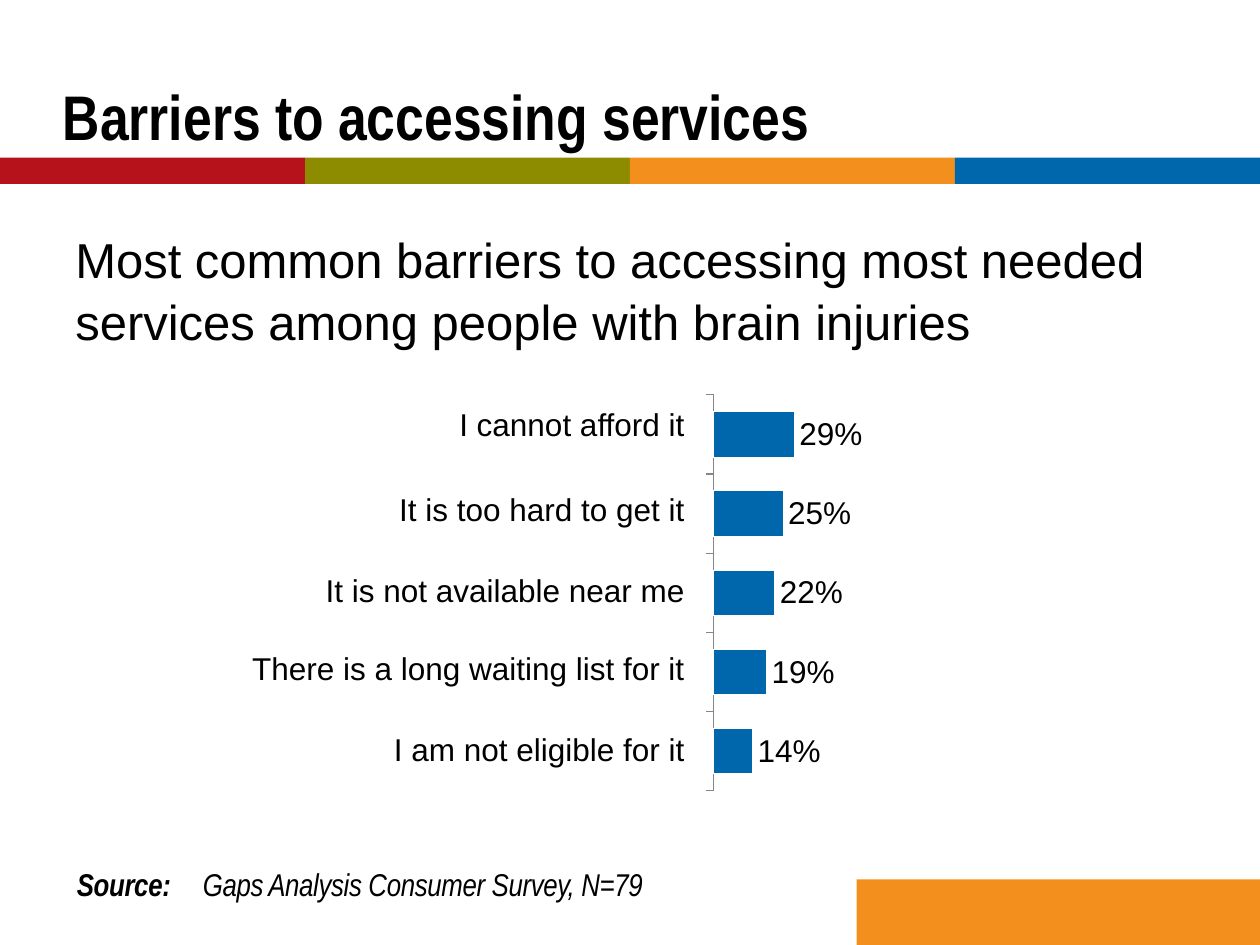
from lxml.etree import SubElement
from pptx import Presentation
from pptx.chart.data import CategoryChartData
from pptx.dml.color import RGBColor
from pptx.enum.chart import XL_CHART_TYPE as ChartType, XL_LABEL_POSITION as LabelPos
from pptx.enum.chart import XL_TICK_LABEL_POSITION as TickLabels, XL_TICK_MARK as Tick
from pptx.enum.shapes import MSO_SHAPE as Shape
from pptx.enum.text import MSO_ANCHOR as Anchor, PP_ALIGN as Align
from pptx.oxml.ns import qn
from pptx.util import Cm, Pt


def color(value):
    return RGBColor.from_string(value)


def add_text(text, left, top, width, height, size, font="Arial"):
    box = slide.shapes.add_textbox(Cm(left), Cm(top), Cm(width), Cm(height))
    box.text_frame.word_wrap = True
    paragraph = box.text_frame.paragraphs[0]
    paragraph.text = text
    paragraph.font.size = Pt(size)
    paragraph.font.name = font
    paragraph.font.color.rgb = color("000000")
    return box.text_frame, paragraph


prs = Presentation()
prs.slide_width, prs.slide_height = Cm(25.4), Cm(19.05)
slide = prs.slides.add_slide(prs.slide_layouts[6])

bands = [
    (0, 3.18, 6.15, 0.53, "B5121B"),
    (6.15, 3.18, 6.55, 0.53, "8D8B00"),
    (12.7, 3.18, 6.55, 0.53, "F3901D"),
    (19.25, 3.18, 6.15, 0.53, "0067AC"),
    (17.27, 17.73, 8.13, 1.32, "F3901D"),
]
for left, top, width, height, fill in bands:
    band = slide.shapes.add_shape(Shape.RECTANGLE, Cm(left), Cm(top), Cm(width), Cm(height))
    band.shadow.inherit = False
    band.fill.solid()
    band.fill.fore_color.rgb = color(fill)
    band.line.fill.background()

title_frame, title = add_text(
    "Barriers to accessing services", 1.27, 0.74, 22.86, 2.34, 36, "Arial Narrow")
title.font.bold = True
title_frame.vertical_anchor = Anchor.BOTTOM
title_frame.margin_left = title_frame.margin_right = 0
title_frame.margin_top = title_frame.margin_bottom = 0

_, intro = add_text(
    "Most common barriers to accessing most needed services among people with brain injuries",
    1.27, 4.45, 22.86, 2.8, 28)
intro.space_before = Pt(12)
intro.line_spacing = 1.05

source_frame, source = add_text("Source:", 1.3, 17.58, 12.04, 0.76, 18, "Arial Narrow")
source_frame.word_wrap = False
source.font.italic = True
source.space_before = Pt(6)
source.line_spacing = Pt(14)
source.runs[0].font.bold = True
source.add_run().text = "\tGaps Analysis Consumer Survey, N=79"
for run in source.runs:
    run.font._element.set("spc", "-20")

barrier_data = CategoryChartData(number_format="###0%")
barrier_data.categories = ["1", "2", "3", "4", "5"]
barrier_data.add_series("Series 1", [0.29, 0.25, 0.22, 0.19, 0.14])
chart = slide.shapes.add_chart(
    ChartType.BAR_CLUSTERED, Cm(8.79), Cm(7.32), Cm(11.43), Cm(9.7), barrier_data).chart
chart.has_legend = False
chart.has_title = False
chart.font.size = Pt(10)
chart.font.name = "Arial"
chart.font.color.rgb = color("000000")

barrier_axis = chart.category_axis
barrier_axis.reverse_order = True
barrier_axis.has_major_gridlines = False
barrier_axis.major_tick_mark = Tick.OUTSIDE
barrier_axis.tick_label_position = TickLabels.NONE
barrier_axis.format.line.color.rgb = color("868686")
barrier_axis.format.line.width = Pt(0.75)

share_axis = chart.value_axis
share_axis.minimum_scale, share_axis.maximum_scale = 0, 1
share_axis.has_major_gridlines = False
share_axis.visible = False

plot = chart.plots[0]
plot.gap_width = 75
plot.vary_by_categories = False
bars = plot.series[0]
bars.format.fill.solid()
bars.format.fill.fore_color.rgb = color("0067AC")
bars.format.line.color.rgb = color("FFFFFF")
shares = bars.data_labels
shares.show_value = True
shares.number_format = "###0%"
shares.number_format_is_linked = False
shares.position = LabelPos.OUTSIDE_END
shares.font.size = Pt(18)
shares.font.name = "Arial"
shares.font.color.rgb = color("000000")

plot_area = chart._chartSpace.chart.plotArea
for old_layout in plot_area.findall(qn("c:layout")):
    plot_area.remove(old_layout)
layout = SubElement(plot_area, qn("c:layout"))
plot_area.insert(0, layout)
manual = SubElement(layout, qn("c:manualLayout"))
settings = {"layoutTarget": "inner", "xMode": "edge", "yMode": "edge",
            "x": "0.49", "y": "0.066", "w": "0.49", "h": "0.823"}
for key, value in settings.items():
    SubElement(manual, qn(f"c:{key}")).set("val", value)

barriers = [
    ("I cannot afford it", 8.05),
    ("It is too hard to get it", 9.75),
    ("It is not available near me", 11.38),
    ("There is a long waiting list for it", 12.95),
    ("I am not eligible for it", 14.6),
]
for barrier, top in barriers:
    _, label = add_text(barrier, 1.27, top, 12.78, 1.02, 18)
    label.alignment = Align.RIGHT

prs.save("out.pptx")
